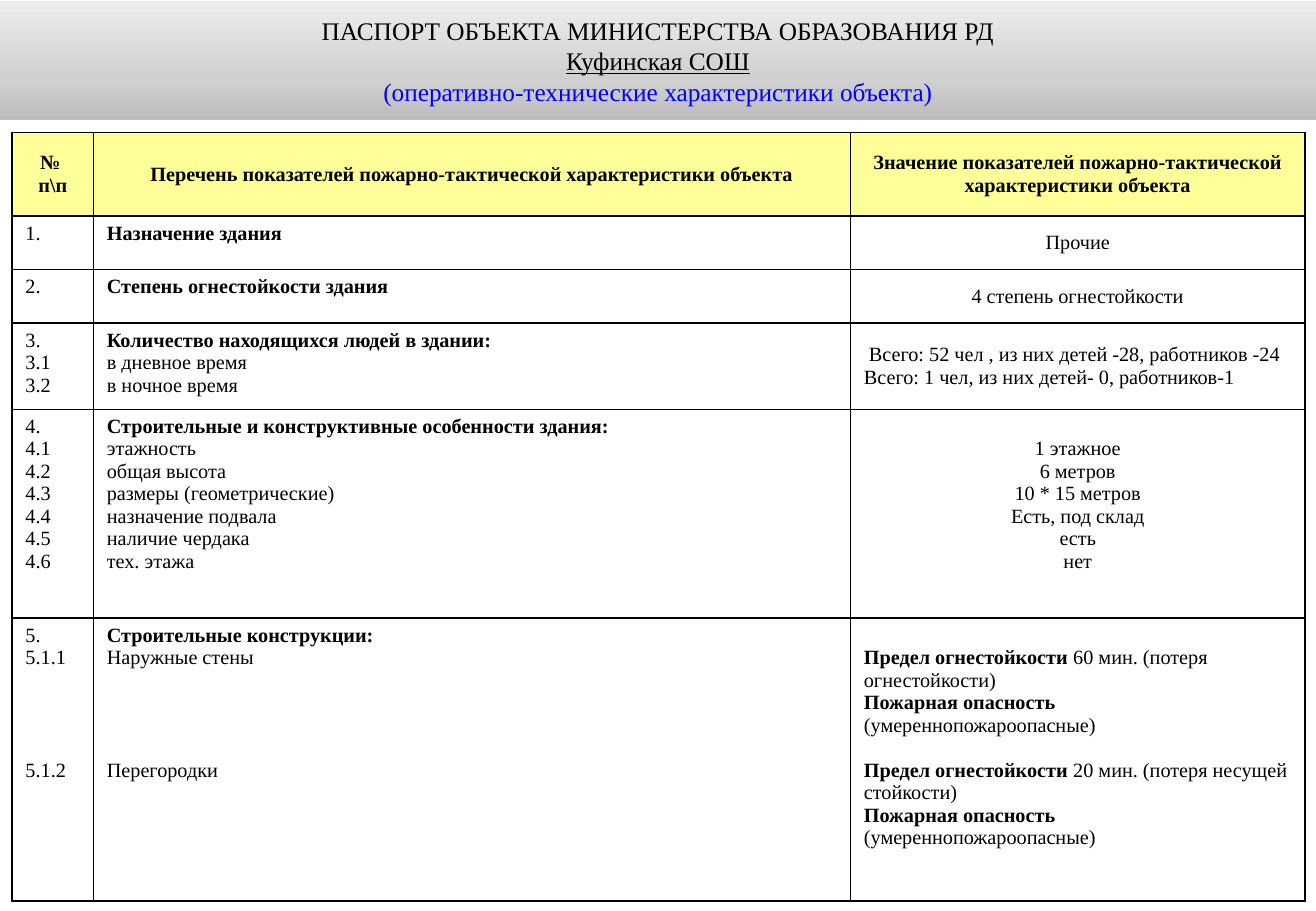
from copy import deepcopy

from lxml import etree
from pptx import Presentation
from pptx.dml.color import RGBColor
from pptx.enum.shapes import MSO_SHAPE
from pptx.enum.text import MSO_ANCHOR, PP_ALIGN
from pptx.oxml.ns import qn
from pptx.util import Inches, Pt

RECTANGLE = MSO_SHAPE.RECTANGLE
TOP, MIDDLE = MSO_ANCHOR.TOP, MSO_ANCHOR.MIDDLE
LEFT, CENTER = PP_ALIGN.LEFT, PP_ALIGN.CENTER
FONT = "Times New Roman"
LINE_PT = 13.35  # height of one 12 pt line


def rgb(value):
    return RGBColor.from_string(value)


def style(run, size, color="000000", bold=False, underline=False):
    font = run.font
    font.name, font.size, font.bold, font.underline = FONT, Pt(size), bold, underline
    font.color.rgb = rgb(color)


prs = Presentation()
prs.slide_width, prs.slide_height = Inches(10.83), Inches(7.5)
slide = prs.slides.add_slide(prs.slide_layouts[6])

# Passport table: text before "|" is bold, an empty line is a gap
column_widths = [0.67, 6.23, 3.74]
row_heights = [0.69, 0.44, 0.44, 0.71, 1.72, 2.33]
indicators = [
    ["№ |\nп\\п|",
     "Перечень показателей пожарно-тактической характеристики объекта|",
     "Значение показателей пожарно-тактической характеристики объекта|"],
    ["1.", "Назначение здания|", "Прочие"],
    ["2.", "Степень огнестойкости здания|", "4 степень огнестойкости"],
    ["3.\n3.1\n3.2",
     "Количество находящихся людей в здании:|\nв дневное время\nв ночное время",
     " Всего: 52 чел , из них детей -28, работников -24\n"
     "Всего: 1 чел, из них детей- 0, работников-1"],
    ["4.\n4.1\n4.2\n4.3\n4.4\n4.5\n4.6",
     "Строительные и конструктивные особенности здания:|\nэтажность\nобщая высота\n"
     "размеры (геометрические)\nназначение подвала\nналичие чердака\nтех. этажа",
     "\n1 этажное\n6 метров\n10 * 15 метров\nЕсть, под склад\nесть\nнет"],
    ["5.\n5.1.1\n\n\n\n\n5.1.2",
     "Строительные конструкции:|\nНаружные стены\n\n\n\n\nПерегородки",
     "\nПредел огнестойкости |60 мин. (потеря огнестойкости)\n"
     "Пожарная опасность |(умереннопожароопасные)\n\n"
     "Предел огнестойкости |20 мин. (потеря несущей стойкости)\n"
     "Пожарная опасность|\n(умереннопожароопасные)"],
]
centered_values = (1, 2, 4)
middle_values = (1, 2, 3)

passport = slide.shapes.add_table(
    len(row_heights), len(column_widths), Inches(0.1), Inches(1.09),
    Inches(sum(column_widths)), Inches(sum(row_heights))).table
passport.first_row = passport.horz_banding = False
for column, width in zip(passport.columns, column_widths):
    column.width = Inches(width)

for r, (height, texts) in enumerate(zip(row_heights, indicators)):
    passport.rows[r].height = Inches(height)
    for c, text in enumerate(texts):
        cell = passport.cell(r, c)
        is_value = c == 2
        is_header = r == 0

        # Borders, then fill
        properties = cell._tc.get_or_add_tcPr()
        for side in ("a:lnL", "a:lnR", "a:lnT", "a:lnB"):
            border = etree.SubElement(properties, qn(side), w=str(Pt(1)))
            border_fill = etree.SubElement(border, qn("a:solidFill"))
            etree.SubElement(border_fill, qn("a:srgbClr"), val="000000")
        cell.fill.solid()
        cell.fill.fore_color.rgb = rgb("FFFF99" if is_header else "FFFFFF")

        # Margins and anchoring
        lines = text.split("\n")
        starts_lower = lines[0] == ""
        cell.margin_left = cell.margin_right = Inches(0.11)
        cell.margin_bottom = Inches(0.05)
        cell.margin_top = Inches(0.05) + (Pt(LINE_PT) if starts_lower else 0)
        in_middle = is_header or (is_value and r in middle_values)
        cell.vertical_anchor = MIDDLE if in_middle else TOP

        # Lines of text
        paragraph, gap = None, 0
        for line in lines[1:] if starts_lower else lines:
            if not line:
                gap += 1
                continue
            if paragraph is None:
                paragraph = cell.text_frame.paragraphs[0]
            else:
                paragraph = cell.text_frame.add_paragraph()
            centered = is_header or (is_value and r in centered_values)
            paragraph.alignment = CENTER if centered else LEFT
            paragraph.space_before = Pt(gap * LINE_PT)
            gap = 0
            strong, _, plain = line.rpartition("|")
            for part, bold in ((strong, True), (plain, False)):
                if part:
                    run = paragraph.add_run()
                    run.text = part
                    style(run, 12, bold=bold)

# Title band with a grey gradient
band = slide.shapes.add_shape(RECTANGLE, 0, Inches(0.01), Inches(10.83), Inches(0.98))
band.shadow.inherit = False
band.line.fill.background()
band.fill.gradient()
band.fill.gradient_angle = 90
stop_list = band._element.spPr.find(qn("a:gradFill")).find(qn("a:gsLst"))
stop_list.insert(1, deepcopy(stop_list[0]))
for stop, position, color in zip(band.fill.gradient_stops, (0, 0.35, 1),
                                 ("BCBCBC", "D0D0D0", "EDEDED")):
    stop.position = position
    stop.color.rgb = rgb(color)

title = band.text_frame
title.word_wrap = True
title.vertical_anchor = MIDDLE
title.margin_left = title.margin_right = Inches(0.09)
title.margin_top = title.margin_bottom = Inches(0.05)
title.text = ("ПАСПОРТ ОБЪЕКТА МИНИСТЕРСТВА ОБРАЗОВАНИЯ РД\n"
              "Куфинская СОШ\n"
              "(оперативно-технические характеристики объекта)")
title_colors = ("000000", "000000", "0000FF")
for i, (paragraph, color) in enumerate(zip(title.paragraphs, title_colors)):
    paragraph.alignment = CENTER
    style(paragraph.runs[0], 15, color, underline=i == 1)

prs.save("out.pptx")
